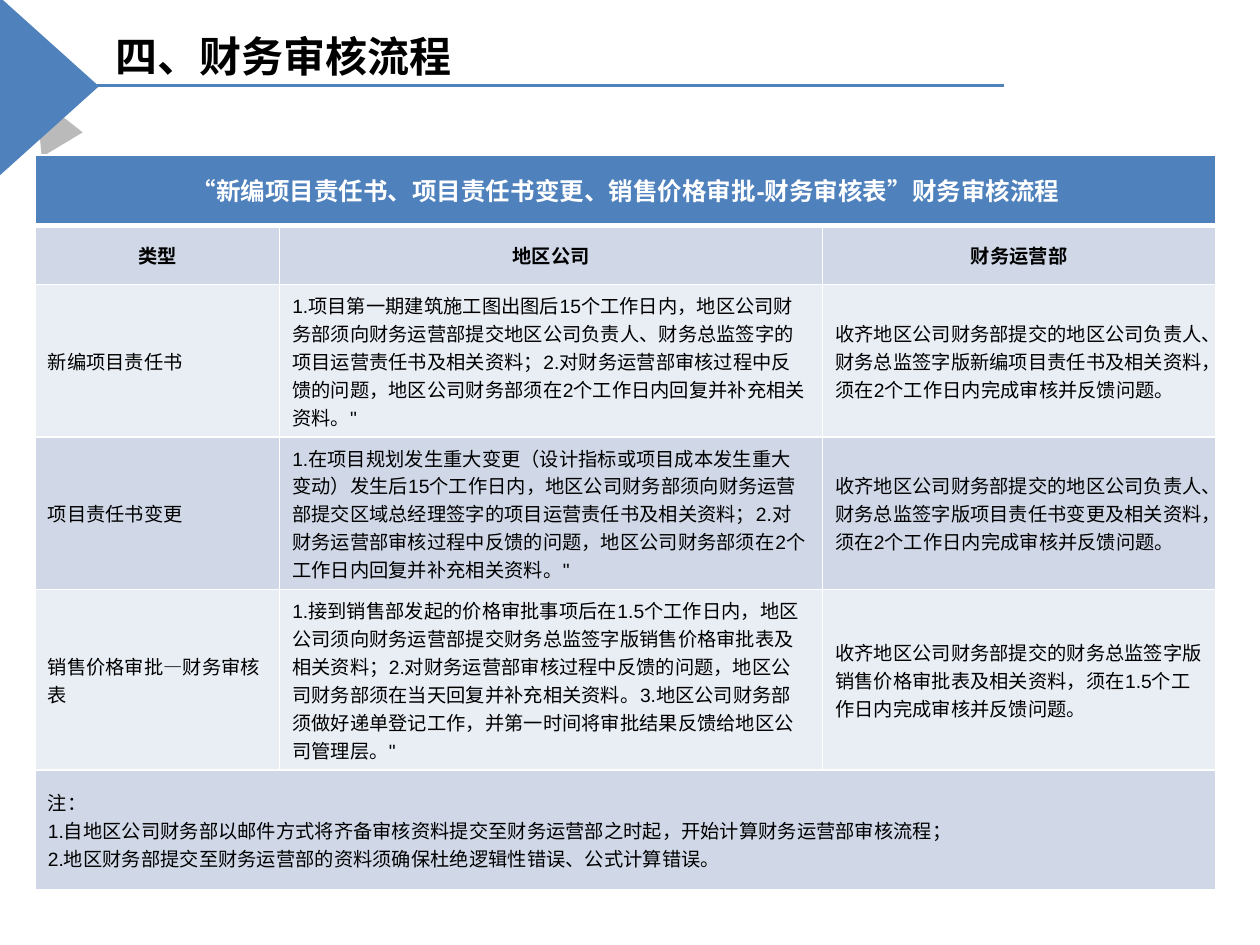
import pptx
import pptx.dml.color
import pptx.enum.shapes
import pptx.enum.text
import pptx.oxml.ns
import pptx.util
from lxml import etree

Inches = pptx.util.Inches
SHAPE = pptx.enum.shapes.MSO_SHAPE
ALIGN = pptx.enum.text.PP_ALIGN
MIDDLE = pptx.enum.text.MSO_ANCHOR.MIDDLE
qn = pptx.oxml.ns.qn

CJK_FONT = "Noto Sans CJK SC"
BLUE, WHITE, BLACK = "4F81BD", "FFFFFF", "000000"
DARK_BAND, LIGHT_BAND = "D0D8E8", "E9EDF4"

COLUMN_WIDTHS = [1.94, 4.31, 3.12]
ROW_HEIGHTS = [0.56, 0.47, 1.21, 1.21, 1.43, 0.95]
ROWS = [
    ["“新编项目责任书、项目责任书变更、销售价格审批-财务审核表”财务审核流程"],
    ["类型", "地区公司", "财务运营部"],
    ["新编项目责任书",
     "1.项目第一期建筑施工图出图后15个工作日内，地区公司财务部须向财务运营部提交地区公司负责人、"
     "财务总监签字的项目运营责任书及相关资料；2.对财务运营部审核过程中反馈的问题，"
     "地区公司财务部须在2个工作日内回复并补充相关资料。\"",
     "收齐地区公司财务部提交的地区公司负责人、财务总监签字版新编项目责任书及相关资料，"
     "须在2个工作日内完成审核并反馈问题。"],
    ["项目责任书变更",
     "1.在项目规划发生重大变更（设计指标或项目成本发生重大变动）发生后15个工作日内，"
     "地区公司财务部须向财务运营部提交区域总经理签字的项目运营责任书及相关资料；"
     "2.对财务运营部审核过程中反馈的问题，地区公司财务部须在2个工作日内回复并补充相关资料。\"",
     "收齐地区公司财务部提交的地区公司负责人、财务总监签字版项目责任书变更及相关资料，"
     "须在2个工作日内完成审核并反馈问题。"],
    ["销售价格审批—财务审核表",
     "1.接到销售部发起的价格审批事项后在1.5个工作日内，地区公司须向财务运营部提交"
     "财务总监签字版销售价格审批表及相关资料；2.对财务运营部审核过程中反馈的问题，"
     "地区公司财务部须在当天回复并补充相关资料。3.地区公司财务部须做好递单登记工作，"
     "并第一时间将审批结果反馈给地区公司管理层。\"",
     "收齐地区公司财务部提交的财务总监签字版销售价格审批表及相关资料，"
     "须在1.5个工作日内完成审核并反馈问题。"],
    ["注：\n"
     "1.自地区公司财务部以邮件方式将齐备审核资料提交至财务运营部之时起，开始计算财务运营部审核流程；\n"
     "2.地区财务部提交至财务运营部的资料须确保杜绝逻辑性错误、公式计算错误。"],
]


def rgb(color):
    return pptx.dml.color.RGBColor.from_string(color)


def write_text(frame, text, size=11, color=BLACK, bold=False, font="Arial", align=ALIGN.LEFT):
    """Fill a text frame, one paragraph per line of text."""
    frame.word_wrap = True
    for index, line in enumerate(text.split("\n")):
        para = frame.paragraphs[0] if index == 0 else frame.add_paragraph()
        para.alignment = align
        span = para.add_run()
        span.text = line
        span.font.name = font
        span.font.size = pptx.util.Pt(size)
        span.font.bold = bold
        span.font.color.rgb = rgb(color)
        east_asian = etree.Element(qn("a:ea"), typeface=CJK_FONT)
        span.font._element.find(qn("a:latin")).addnext(east_asian)


def add_triangle(page, left, top, width, height, color, rotation, peak=0.5, opacity=100):
    triangle = page.shapes.add_shape(SHAPE.ISOSCELES_TRIANGLE, Inches(left), Inches(top),
                                     Inches(width), Inches(height))
    triangle.adjustments[0] = peak
    triangle.rotation = rotation
    triangle.shadow.inherit = False
    triangle.line.fill.background()
    triangle.fill.solid()
    triangle.fill.fore_color.rgb = rgb(color)
    if opacity < 100:
        color_element = triangle._element.spPr.find(".//" + qn("a:srgbClr"))
        etree.SubElement(color_element, qn("a:alpha"), val=str(opacity * 1000))


def add_rule(page, start_x, end_x, y):
    rule = page.shapes.add_connector(pptx.enum.shapes.MSO_CONNECTOR.STRAIGHT,
                                     Inches(start_x), Inches(y), Inches(end_x), Inches(y))
    rule.line.color.rgb = rgb(BLUE)
    rule.line.width = pptx.util.Pt(2)
    etree.SubElement(rule._element.spPr, qn("a:effectLst"))


def set_title(page, text):
    title = page.shapes.title
    title.left, title.top = Inches(0.85), Inches(0.2)
    title.width, title.height = Inches(6.04), Inches(0.48)
    frame = title.text_frame
    frame.margin_left = frame.margin_right = Inches(0.07)
    frame.margin_top = frame.margin_bottom = Inches(0.04)
    frame.vertical_anchor = MIDDLE
    frame.auto_size = pptx.enum.text.MSO_AUTO_SIZE.NONE
    write_text(frame, text, size=24, bold=True, font=CJK_FONT)


def set_borders(cell, **widths):
    """Draw white borders; widths in points, keyed L, R, T and B."""
    properties = cell._tc.get_or_add_tcPr()
    for index, (side, width) in enumerate(widths.items()):
        border = etree.Element(qn("a:ln" + side), w=str(pptx.util.Pt(width)))
        fill = etree.SubElement(border, qn("a:solidFill"))
        etree.SubElement(fill, qn("a:srgbClr"), val=WHITE)
        properties.insert(index, border)


def row_format(row_index):
    """Return the fill and the text format of a table row."""
    if row_index == 0:
        return BLUE, dict(size=14, color=WHITE, bold=True, align=ALIGN.CENTER)
    if row_index == 1:
        return DARK_BAND, dict(bold=True, align=ALIGN.CENTER)
    return (DARK_BAND if row_index % 2 else LIGHT_BAND), {}


def add_review_table(page):
    table = page.shapes.add_table(len(ROWS), len(COLUMN_WIDTHS), Inches(0.28), Inches(1.23),
                                  Inches(sum(COLUMN_WIDTHS)), Inches(sum(ROW_HEIGHTS))).table
    table.first_row = table.horz_banding = False
    for column, width in zip(table.columns, COLUMN_WIDTHS):
        column.width = Inches(width)
    for row_index, texts in enumerate(ROWS):
        row = table.rows[row_index]
        row.height = Inches(ROW_HEIGHTS[row_index])
        fill, text_format = row_format(row_index)
        if row_index == len(ROWS) - 1:
            fill = DARK_BAND
        for cell in row.cells:
            cell.fill.solid()
            cell.fill.fore_color.rgb = rgb(fill)
            cell.vertical_anchor = MIDDLE
            set_borders(cell, L=1, R=1, T=3 if row_index == 1 else 1,
                        B=3 if row_index == 0 else 1)
        if len(texts) == 1:
            row.cells[0].merge(row.cells[len(COLUMN_WIDTHS) - 1])
        for cell, text in zip(row.cells, texts):
            write_text(cell.text_frame, text, **text_format)


def main():
    deck = pptx.Presentation()
    deck.slide_width, deck.slide_height = Inches(10), Inches(7.5)
    page = deck.slides.add_slide(deck.slide_layouts[5])

    # Corner arrow and heading rule
    add_triangle(page, 0.19, 0.74, 0.38, 0.44, "404040", 329, peak=0.56, opacity=36)
    add_triangle(page, -0.32, 0.29, 1.42, 0.79, BLUE, 90)
    add_rule(page, 0.77, 7.97, 0.68)

    # Heading and review table
    set_title(page, "四、财务审核流程")
    add_review_table(page)
    deck.save("out.pptx")


if __name__ == "__main__":
    main()
